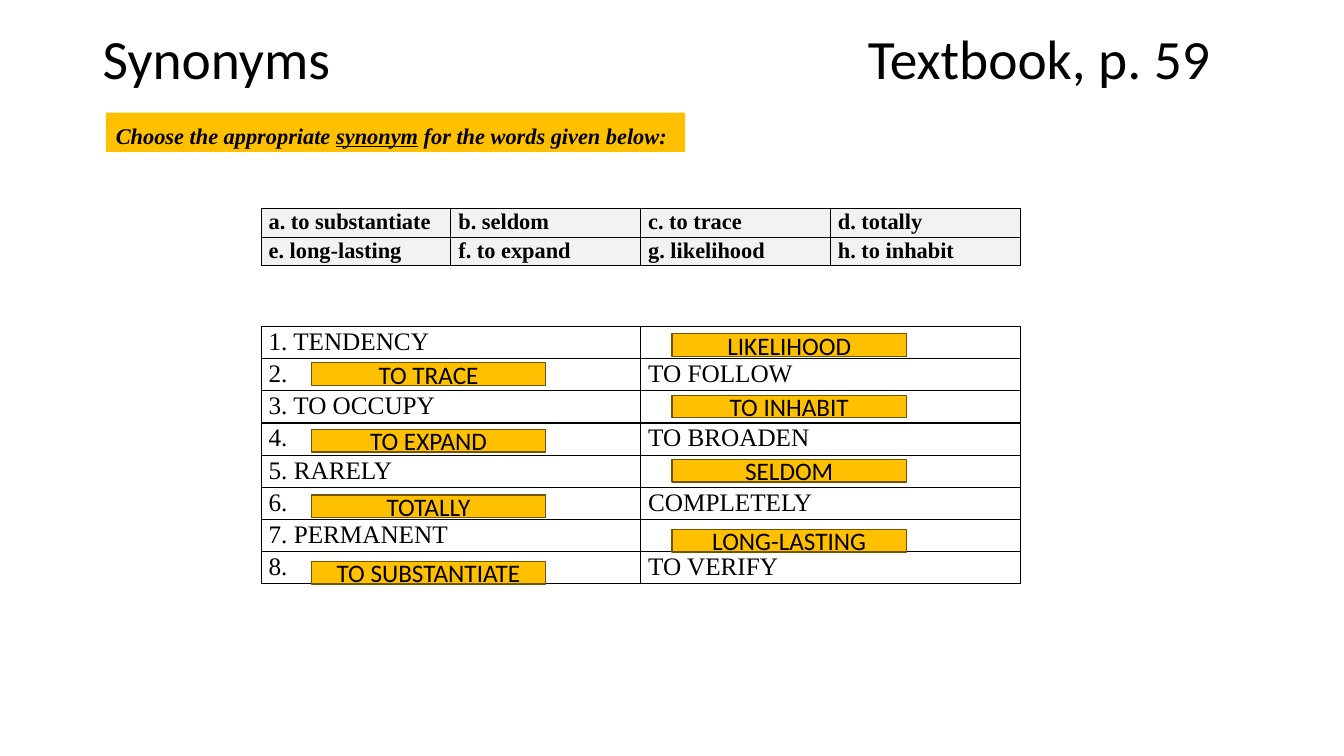
from lxml.etree import SubElement
from pptx import Presentation
from pptx.dml.color import RGBColor
from pptx.enum.shapes import MSO_SHAPE
from pptx.enum.text import MSO_ANCHOR, PP_ALIGN
from pptx.oxml import parse_xml
from pptx.oxml.ns import nsdecls, qn
from pptx.util import Cm, Pt

BLACK, AMBER, BROWN, GREY = "000000", "FFC000", "705400", "F2F2F2"
SANS, SERIF = "Calibri", "Times New Roman"

WORD_BANK = [
    ["a. to substantiate", "b. seldom", "c. to trace", "d. totally"],
    ["e. long-lasting", "f. to expand", "g. likelihood", "h. to inhabit"],
]
WORD_PAIRS = [
    ["1. TENDENCY", ""],
    ["2.", "TO FOLLOW"],
    ["3. TO OCCUPY", ""],
    ["4. ", "TO BROADEN"],
    ["5. RARELY", ""],
    ["6. ", "COMPLETELY"],
    ["7. PERMANENT", ""],
    ["8. ", "TO VERIFY"],
]
# Answers alternate between the right and the left column
ANSWERS = [
    ("LIKELIHOOD", 8.41),
    ("TO TRACE", 9.14),
    ("TO INHABIT", 9.96),
    ("TO EXPAND", 10.82),
    ("SELDOM", 11.58),
    ("TOTALLY", 12.47),
    ("LONG-LASTING", 13.34),
    ("TO SUBSTANTIATE", 14.15),
]
ANSWER_LEFTS = (16.94, 7.85)


def color(value):
    return RGBColor.from_string(value)


class SlideBuilder:
    def __init__(self, slide):
        self.slide = slide

    def add_run(self, paragraph, text, font, size, bold=False, italic=False, underline=False):
        run = paragraph.add_run()
        run.text = text
        run.font.name = font
        run.font.size = Pt(size)
        run.font.bold = bold
        run.font.italic = italic
        run.font.underline = underline
        run.font.color.rgb = color(BLACK)

    def add_title(self, left_text, right_text, tab_position):
        """Place both title parts on one line, parted by a tab stop."""
        box = self.slide.shapes.add_textbox(Cm(2.34), Cm(1), Cm(29.21), Cm(1.09))
        frame = box.text_frame
        frame.word_wrap = True
        frame.vertical_anchor = MSO_ANCHOR.MIDDLE
        paragraph = frame.paragraphs[0]
        paragraph.line_spacing = 0.9
        tabs = SubElement(paragraph._p.get_or_add_pPr(), qn("a:tabLst"))
        SubElement(tabs, qn("a:tab"), pos=str(Cm(tab_position)), algn="l")
        self.add_run(paragraph, f"{left_text}\t{right_text}", SANS, 39.6)

    def add_box(self, left, top, width, height, line=None):
        shape = self.slide.shapes.add_shape(
            MSO_SHAPE.RECTANGLE, Cm(left), Cm(top), Cm(width), Cm(height))
        shape.shadow.inherit = False
        shape.fill.solid()
        shape.fill.fore_color.rgb = color(AMBER)
        if line:
            shape.line.color.rgb = color(line)
            shape.line.width = Pt(1)
        else:
            shape.line.fill.background()
        return shape.text_frame

    def add_instruction(self, parts):
        frame = self.add_box(2.67, 2.84, 14.6, 0.99)
        frame.word_wrap = False
        frame.vertical_anchor = MSO_ANCHOR.TOP
        paragraph = frame.paragraphs[0]
        paragraph.alignment = PP_ALIGN.JUSTIFY
        paragraph.line_spacing = 1.15
        for text, underline in parts:
            self.add_run(paragraph, text, SERIF, 16, True, True, underline)

    def add_answer(self, text, left, top):
        frame = self.add_box(left, top, 5.9, 0.57, BROWN)
        frame.vertical_anchor = MSO_ANCHOR.MIDDLE
        paragraph = frame.paragraphs[0]
        paragraph.alignment = PP_ALIGN.CENTER
        self.add_run(paragraph, text, SANS, 18)

    def add_table(self, rows, top, height, size, bold=False, fill=None):
        table = self.slide.shapes.add_table(
            len(rows), len(rows[0]), Cm(6.58), Cm(top), Cm(19.13), Cm(height)).table
        table.first_row = False
        table.horz_banding = False
        for row_index, row in enumerate(rows):
            for column_index, text in enumerate(row):
                cell = table.cell(row_index, column_index)
                self.style_cell(cell, fill)
                paragraph = cell.text_frame.paragraphs[0]
                paragraph.alignment = PP_ALIGN.JUSTIFY
                if text:
                    paragraph.line_spacing = 1.05
                    self.add_run(paragraph, text, SERIF, size, bold)
                else:
                    # Small type keeps an empty cell from stretching its row
                    SubElement(paragraph._p, qn("a:endParaRPr"), sz="1200")

    def style_cell(self, cell, fill):
        cell.margin_left = cell.margin_right = Cm(0.19)
        cell.margin_top = cell.margin_bottom = 0
        if fill:
            cell.fill.solid()
            cell.fill.fore_color.rgb = color(fill)
        else:
            cell.fill.background()
        properties = cell._tc.get_or_add_tcPr()
        for index, side in enumerate("LRTB"):
            properties.insert(index, parse_xml(
                f'<a:ln{side} {nsdecls("a")} w="{Pt(1)}"><a:solidFill>'
                f'<a:srgbClr val="{BLACK}"/></a:solidFill></a:ln{side}>'))


def main():
    presentation = Presentation()
    presentation.slide_width = Cm(33.87)
    presentation.slide_height = Cm(19.05)
    builder = SlideBuilder(presentation.slides.add_slide(presentation.slide_layouts[6]))

    builder.add_title("Synonyms", "Textbook, p. 59", 19.28)
    builder.add_table(WORD_BANK, 5.26, 1.43, 16, bold=True, fill=GREY)
    builder.add_table(WORD_PAIRS, 8.23, 6.48, 18)
    builder.add_instruction([
        ("Choose the appropriate ", False),
        ("synonym", True),
        (" for the words given below:", False),
    ])
    for index, (answer, top) in enumerate(ANSWERS):
        builder.add_answer(answer, ANSWER_LEFTS[index % 2], top)

    presentation.save("out.pptx")


if __name__ == "__main__":
    main()
